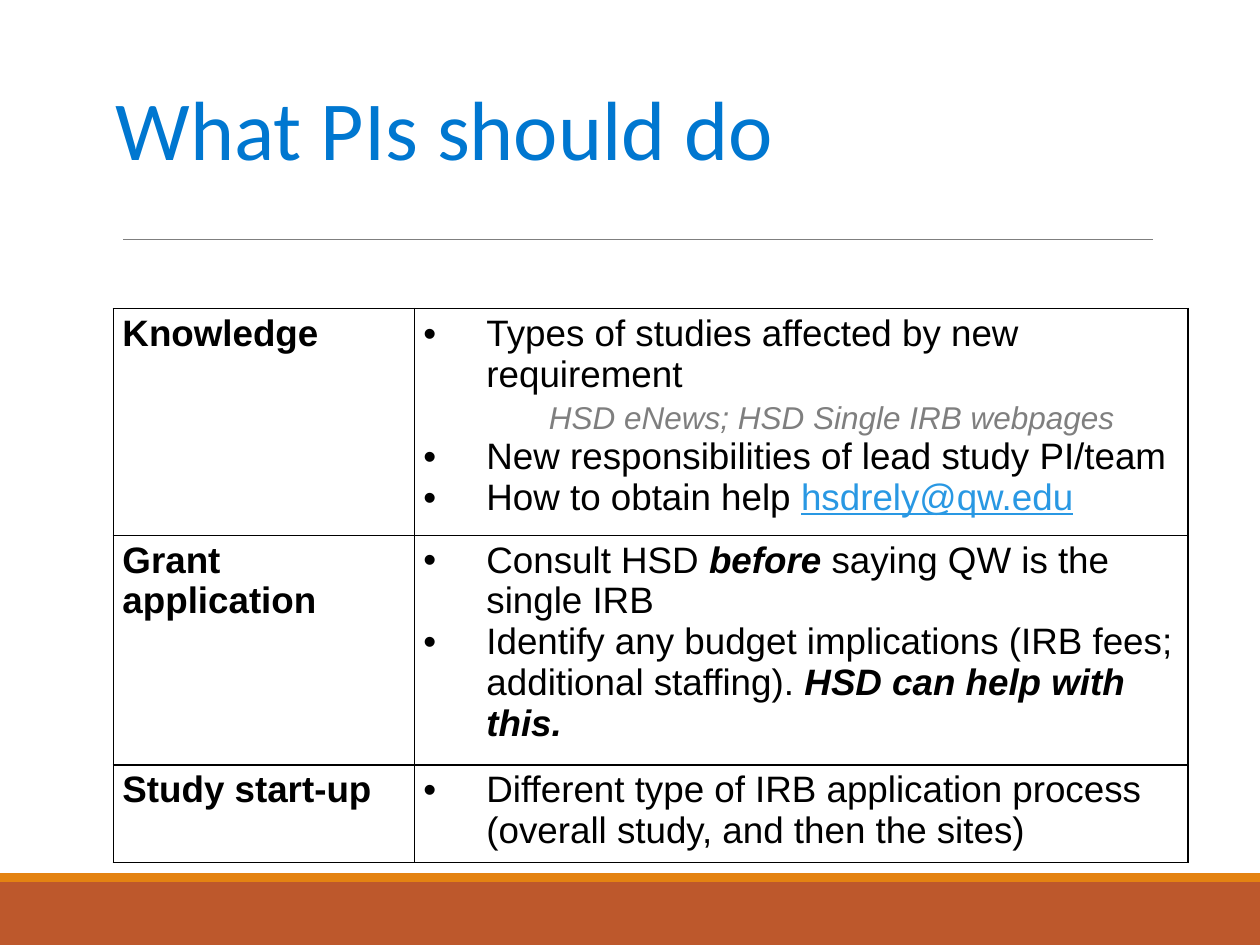
from lxml import etree
from pptx import Presentation
from pptx.dml.color import RGBColor
from pptx.enum.shapes import MSO_CONNECTOR, MSO_SHAPE
from pptx.enum.text import MSO_ANCHOR, PP_ALIGN
from pptx.oxml.ns import qn
from pptx.util import Pt

STRAIGHT = MSO_CONNECTOR.STRAIGHT
RECT = MSO_SHAPE.RECTANGLE
BOTTOM = MSO_ANCHOR.BOTTOM
CENTER = PP_ALIGN.CENTER

BLACK, GREY, LINK = "000000", "7F7F7F", "2998E3"
BOLD = {"bold": True}
STRONG = {"bold": True, "italic": True}
SOURCE = {"size": 18, "color": GREY, "italic": True}
ADDRESS = {"color": LINK, "underline": True}

COLUMNS = (172, 442)
ROWS = [
    (122.4, "Knowledge", [
        [("Types of studies affected by new requirement", {})],
        [("HSD eNews; HSD Single IRB webpages", SOURCE)],
        [("New responsibilities of lead study PI/team", {})],
        [("How to obtain help ", {}), ("hsdrely@qw.edu", ADDRESS)],
    ]),
    (122.4, "Grant application", [
        [("Consult HSD ", {}), ("before", STRONG),
         (" saying QW is the single IRB", {})],
        [("Identify any budget implications (IRB fees; additional staffing). ", {}),
         ("HSD can help with this.", STRONG)],
    ]),
    (55.8, "Study start-up", [
        [("Different type of IRB application process "
          "(overall study, and then the sites)", {})],
    ]),
]


def rgb(value):
    """Turn a hex string into a colour."""
    return RGBColor.from_string(value)


def add_run(p, text, size=21, color=BLACK, name="Arial", bold=False,
            italic=False, underline=False):
    """Append a formatted run to a paragraph."""
    r = p.add_run()
    r.text = text
    f = r.font
    f.size, f.name, f.bold, f.italic = Pt(size), name, bold, italic
    f.underline = underline
    f.color.rgb = rgb(color)


def indent(p, left, first=0, bullet=None):
    """Set a paragraph's indents and optional bullet."""
    pPr = p._p.get_or_add_pPr()
    pPr.set("marL", str(Pt(left)))
    pPr.set("indent", str(Pt(first)))
    if bullet:
        etree.SubElement(pPr, qn("a:buFont"), typeface="Arial")
        etree.SubElement(pPr, qn("a:buChar"), char=bullet)


def add_borders(cell):
    """Draw a thin black border on every side of a cell."""
    tcPr = cell._tc.get_or_add_tcPr()
    for i, side in enumerate(("lnL", "lnR", "lnT", "lnB")):
        ln = etree.Element(qn(f"a:{side}"), w=str(Pt(1)))
        fill = etree.SubElement(ln, qn("a:solidFill"))
        etree.SubElement(fill, qn("a:srgbClr"), val=BLACK)
        tcPr.insert(i, ln)


def add_footer(s, x, y, w, h):
    """Place the footer band with its accent strip on top."""
    strip = 5
    for top, height, color in ((y + strip, h - strip, "BD582C"),
                               (y, strip, "E48312")):
        sp = s.shapes.add_shape(RECT, Pt(x), Pt(top), Pt(w), Pt(height))
        sp.shadow.inherit = False
        sp.fill.solid()
        sp.fill.fore_color.rgb = rgb(color)
        sp.line.fill.background()


def add_title(s, x, y, w, h):
    """Place the title and the rule below it."""
    sp = s.shapes.add_textbox(Pt(x), Pt(y), Pt(w), Pt(59))
    tf = sp.text_frame
    tf.word_wrap = True
    tf.vertical_anchor = BOTTOM
    p = tf.paragraphs[0]
    p.line_spacing = 0.85
    add_run(p, "What PIs should do", 48, "0077D0", "Calibri")
    rule = s.shapes.add_connector(STRAIGHT, Pt(x + 11.5), Pt(y + h),
                                  Pt(x + w), Pt(y + h))
    rule.line.color.rgb = rgb(GREY)
    rule.line.width = Pt(0.75)
    etree.SubElement(rule._element.spPr, qn("a:effectLst"))


def fill_cell(cell, paragraphs, bullets):
    """Write paragraphs of runs into a bordered cell."""
    cell.fill.background()
    add_borders(cell)
    cell.margin_left = cell.margin_right = Pt(5.2)
    cell.margin_top = cell.margin_bottom = Pt(2.6)
    tf = cell.text_frame
    for i, runs in enumerate(paragraphs):
        p = tf.add_paragraph() if i else tf.paragraphs[0]
        if runs[0][1] is SOURCE:
            p.alignment = CENTER
            p.line_spacing = Pt(23.5)
            indent(p, 35)
        elif bullets:
            indent(p, 36, -36, "•")
        for text, style in runs:
            add_run(p, text, **style)


def add_tasks(s, x, y):
    """Place the table of stages and tasks."""
    height = sum(row[0] for row in ROWS)
    frame = s.shapes.add_table(len(ROWS), len(COLUMNS), Pt(x), Pt(y),
                               Pt(sum(COLUMNS)), Pt(height))
    table = frame.table
    table.first_row = table.horz_banding = False
    for column, width in zip(table.columns, COLUMNS):
        column.width = Pt(width)
    for i, (row_height, stage, tasks) in enumerate(ROWS):
        table.rows[i].height = Pt(row_height)
        fill_cell(table.cell(i, 0), [[(stage, BOLD)]], False)
        fill_cell(table.cell(i, 1), tasks, True)


def main():
    """Build the slide and save it."""
    prs = Presentation()
    prs.slide_width, prs.slide_height = Pt(720), Pt(540)
    s = prs.slides.add_slide(prs.slide_layouts[6])
    add_footer(s, 0, 499, 720, 41)
    add_title(s, 59, 46, 600, 90.8)
    add_tasks(s, 64.8, 176.4)
    prs.save("out.pptx")


if __name__ == "__main__":
    main()
